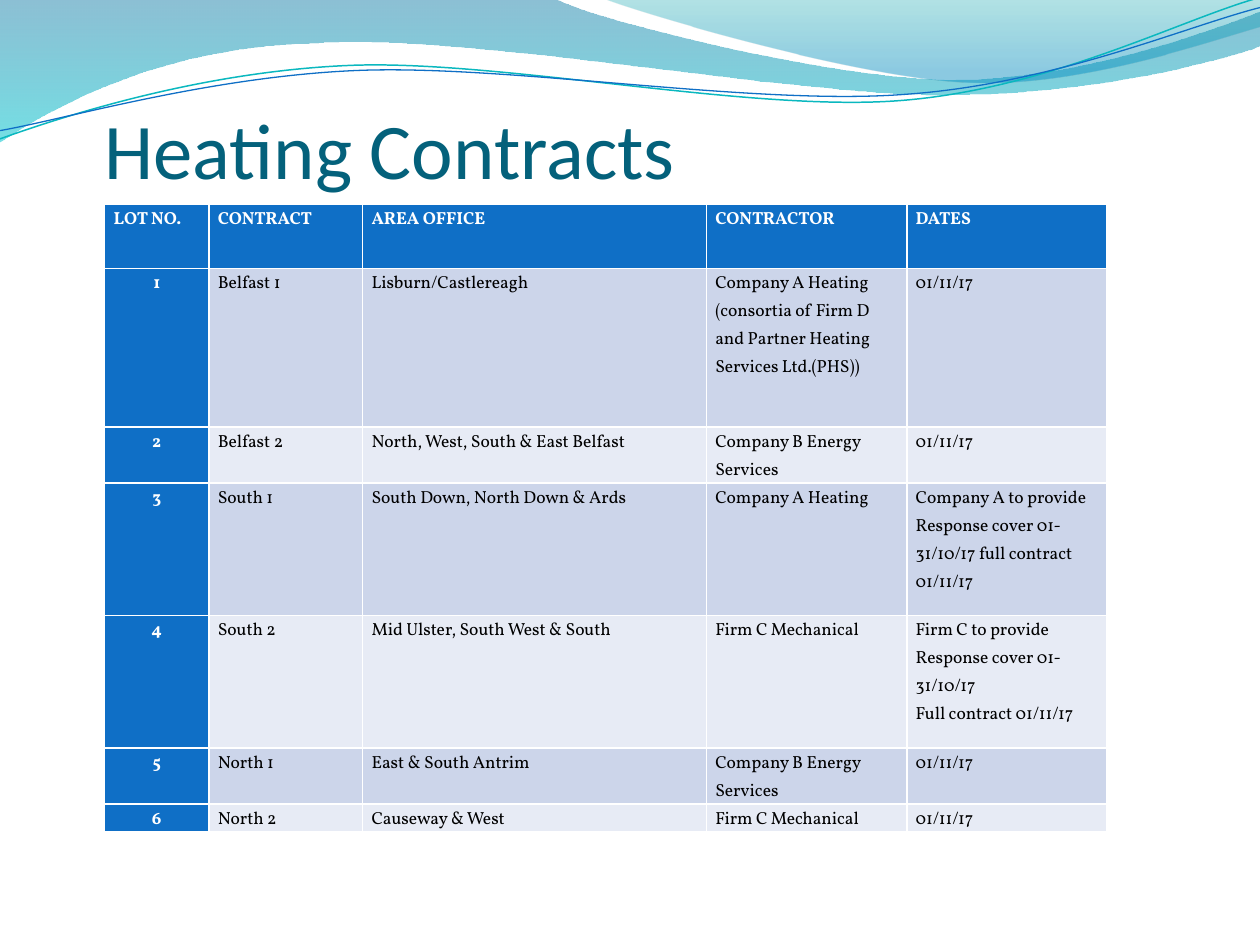
import pptx
import pptx.util
import pptx.dml.color
import pptx.enum.text
import pptx.oxml.ns
from lxml import etree

Cm, Pt = pptx.util.Cm, pptx.util.Pt
qn = pptx.oxml.ns.qn
HUNDREDTH_INCH = Cm(0.0254)


def color(hex_text):
    return pptx.dml.color.RGBColor.from_string(hex_text)


def add_wave(shapes, start, segments, close):
    points = [point for segment in segments for point in zip(segment[::2], segment[1::2])]
    builder = shapes.build_freeform(*start, scale=HUNDREDTH_INCH)
    builder.add_line_segments(points, close=close)
    wave = builder.convert_to_shape()
    wave.shadow.inherit = False
    corners = list(wave._element.iter(qn("a:lnTo")))
    for segment in segments:
        if len(segment) == 6:
            curve = etree.Element(qn("a:cubicBezTo"))
            corners[0].addprevious(curve)
            for corner in corners[:3]:
                curve.append(corner[0])
                corner.getparent().remove(corner)
        corners = corners[len(segment) // 2:]
    return wave


prs = pptx.Presentation()
prs.slide_width, prs.slide_height = Cm(25.4), Cm(19.05)
slide = prs.slides.add_slide(prs.slide_layouts[5])
shapes = slide.shapes

bands = [
    ((0, 0),
     [(440, -1), (476, 17, 664, 63, 758, 63), (853, 63, 958, 26, 1000, 9), (1001, 36),
      (983, 44, 870, 76, 746, 75), (622, 75, 382, 28, 257, 34), (129, 36, 46, 83, -1, 113)],
     [(0, "0074A1", 45), (1, "00C6CF", 55)]),
    ((479, -1),
     [(509, 11, 682, 62, 769, 65), (856, 69, 961, 32, 1000, 21), (1000, 0)],
     [(0, "00A1A9", 30), (0.8, "008BBF", 45)]),
]
for start, segments, stops in bands:
    band = add_wave(shapes, start, segments, True)
    band.line.fill.background()
    band.fill.gradient()
    band.fill.gradient_angle = 270
    for stop, (position, tint, opacity) in zip(band.fill.gradient_stops, stops):
        stop.position = position
        stop.color.rgb = color(tint)
    for tint, (_, _, opacity) in zip(band._element.spPr.find(qn("a:gradFill")).iter(qn("a:srgbClr")), stops):
        etree.SubElement(tint, qn("a:alpha")).set("val", str(opacity * 1000))

strands = [
    ((-2, 111),
     [(48, 93, 158, 57, 277, 52), (395, 47, 593, 89, 713, 80), (833, 71, 938, 15, 1000, -2)],
     "0AB8BF", 0.85),
    ((-2, 104),
     [(47, 96, 164, 61, 283, 56), (403, 51, 597, 84, 717, 75), (836, 67, 941, 21, 1000, 6)],
     "0F6FC6", 0.75),
]
for start, segments, tint, weight in strands:
    strand = add_wave(shapes, start, segments, False)
    strand.fill.background()
    strand.line.color.rgb = color(tint)
    strand.line.width = Pt(weight)

title = shapes.title
shapes._spTree.append(title._element)
title.left, title.top, title.width, title.height = Cm(2.11), Cm(2.13), Cm(22.86), Cm(1.8)
title.text = "Heating Contracts"
heading = title.text_frame
heading.auto_size = pptx.enum.text.MSO_AUTO_SIZE.NONE
heading.vertical_anchor = pptx.enum.text.MSO_ANCHOR.BOTTOM
heading.margin_left = heading.margin_right = heading.margin_bottom = 0
heading.margin_top = Cm(0.13)
heading.paragraphs[0].alignment = pptx.enum.text.PP_ALIGN.LEFT
heading.paragraphs[0].font.size = Pt(45)
heading.paragraphs[0].font.name = "Calibri"
heading.paragraphs[0].font.color.rgb = color("04617B")

contracts = [
    ["LOT NO.", "CONTRACT", "AREA OFFICE", "CONTRACTOR", "DATES"],
    ["1", "Belfast 1", "Lisburn/Castlereagh",
     "Company A Heating\n(consortia of Firm D and Partner Heating Services Ltd.(PHS))", "01/11/17"],
    ["2", "Belfast 2", "North, West, South & East Belfast", "Company B Energy Services", "01/11/17"],
    ["3", "South 1", "South Down, North Down & Ards", "Company A Heating",
     "Company A to provide Response cover 01- 31/10/17 full contract 01/11/17"],
    ["4", "South 2", "Mid Ulster, South West & South", "Firm C Mechanical",
     "Firm C to provide Response cover 01-31/10/17\nFull contract 01/11/17"],
    ["5", "North 1", "East & South Antrim", "Company B Energy Services", "01/11/17"],
    ["6", "North 2", "Causeway & West", "Firm C Mechanical", "01/11/17"],
]
column_widths = [2.1, 3.1, 6.93, 4.04, 4.04]
row_heights = [1.3, 3.2, 1.04, 2.67, 2.67, 1.04, 0.51]
table = shapes.add_table(len(contracts), len(column_widths), Cm(2.11), Cm(4.11),
                         Cm(sum(column_widths)), Cm(sum(row_heights))).table
table.first_col = True
for column, width in zip(table.columns, column_widths):
    column.width = Cm(width)
for row, height in zip(table.rows, row_heights):
    row.height = Cm(height)

for r, contract in enumerate(contracts):
    for c, entry in enumerate(contract):
        cell = table.cell(r, c)
        is_label = r == 0 or c == 0
        cell.fill.solid()
        cell.fill.fore_color.rgb = color("0F6FC6" if is_label else "CCD5EA" if r % 2 else "E7EBF5")
        cell.margin_left = cell.margin_right = Cm(0.18)
        cell.margin_top = cell.margin_bottom = 0
        cell.text = entry
        for paragraph in cell.text_frame.paragraphs:
            paragraph.line_spacing = 1.15
            if r and c == 0:
                paragraph.alignment = pptx.enum.text.PP_ALIGN.CENTER
            paragraph.font.size = Pt(10)
            paragraph.font.name = "Vollkorn"
            paragraph.font.bold = is_label
            paragraph.font.color.rgb = color("FFFFFF" if is_label else "000000")

prs.save("out.pptx")
